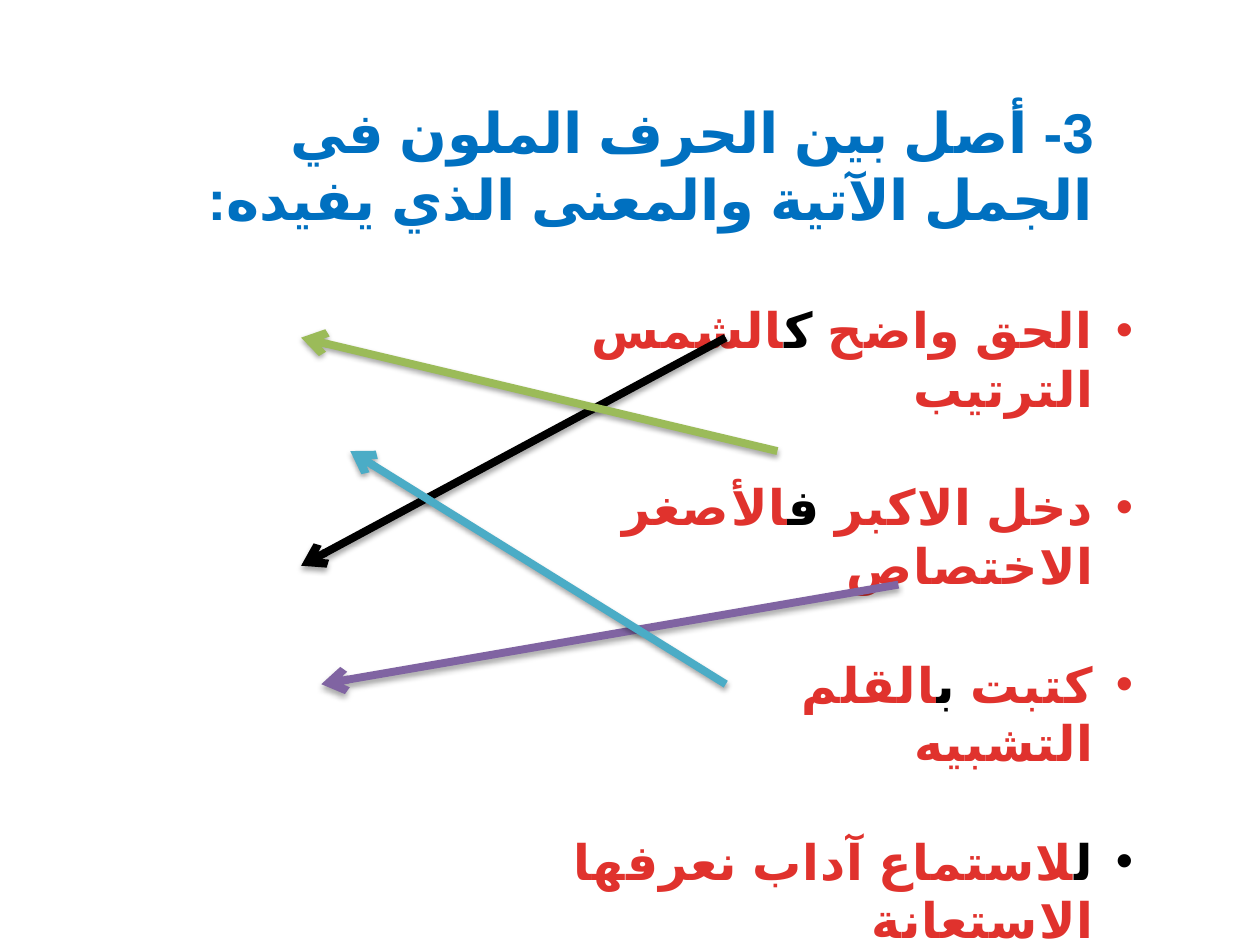
from dataclasses import dataclass

from lxml import etree
from pptx import Presentation
from pptx.dml.color import RGBColor
from pptx.enum.lang import MSO_LANGUAGE_ID
from pptx.enum.shapes import MSO_CONNECTOR
from pptx.enum.text import MSO_ANCHOR, MSO_AUTO_SIZE, PP_ALIGN
from pptx.oxml import parse_xml
from pptx.oxml.ns import qn
from pptx.util import Inches, Pt

STRAIGHT = MSO_CONNECTOR.STRAIGHT
TOP = MSO_ANCHOR.TOP
NO_FIT = MSO_AUTO_SIZE.NONE
RIGHT = PP_ALIGN.RIGHT
ARABIC = MSO_LANGUAGE_ID.ARABIC

FONT = "Calibri"
BLUE = RGBColor(0x00, 0x70, 0xC0)
RED = RGBColor(0xE0, 0x32, 0x2D)
BLACK = RGBColor(0x00, 0x00, 0x00)
GREEN = RGBColor(0x9B, 0xBB, 0x59)
PURPLE = RGBColor(0x80, 0x64, 0xA2)
TEAL = RGBColor(0x4B, 0xAC, 0xC6)

SHADOW = (
    '<a:effectLst xmlns:a="http://schemas.openxmlformats.org/drawingml/2006/main">'
    '<a:outerShdw blurRad="40000" dist="23000" dir="5400000" rotWithShape="0">'
    '<a:srgbClr val="000000"><a:alpha val="35000"/></a:srgbClr>'
    "</a:outerShdw></a:effectLst>"
)


@dataclass
class Sentence:
    before: str
    letter: str
    after: str
    meaning: str


@dataclass
class Arrow:
    start: tuple[float, float]
    end: tuple[float, float]
    color: RGBColor


SENTENCES = [
    Sentence("الحق واضح ", "ك", "الشمس", "الترتيب"),
    Sentence("دخل الاكبر ", "ف", "الأصغر", "الاختصاص"),
    Sentence("كتبت ", "ب", "القلم", "التشبيه"),
    Sentence("", "ل", "لاستماع آداب نعرفها", "الاستعانة"),
]

ARROWS = [
    Arrow((5.76, 2.68), (2.39, 4.49), BLACK),
    Arrow((6.17, 3.58), (2.39, 2.68), GREEN),
    Arrow((7.13, 4.64), (2.55, 5.43), PURPLE),
    Arrow((5.76, 5.43), (2.78, 3.58), TEAL),
]


def set_rtl(p) -> None:
    p.alignment = RIGHT
    p._p.get_or_add_pPr().set("rtl", "1")


def format_run(r, size: int, color: RGBColor) -> None:
    r.font.name = FONT
    r.font.size = Pt(size)
    r.font.bold = True
    r.font.color.rgb = color
    # Language and complex-script font decide how Arabic letters are drawn
    r.font.language_id = ARABIC
    etree.SubElement(r._r.get_or_add_rPr(), qn("a:cs")).set("typeface", "Arial")


def add_bullet(p) -> None:
    pPr = p._p.get_or_add_pPr()
    pPr.set("marL", str(Inches(0.31)))
    pPr.set("indent", str(-Inches(0.31)))
    etree.SubElement(pPr, qn("a:buFont")).set("typeface", "Arial")
    etree.SubElement(pPr, qn("a:buChar")).set("char", "•")


def add_colored(p, text: str, color: RGBColor) -> None:
    if text:
        r = p.add_run()
        r.text = text
        format_run(r, 28, color)
        r._r.get_or_add_rPr().set("spc", "50")


def add_sentence(p, sentence: Sentence) -> None:
    set_rtl(p)
    add_bullet(p)
    add_colored(p, sentence.before, RED)
    add_colored(p, sentence.letter, BLACK)
    add_colored(p, sentence.after, RED)
    p.add_line_break()
    add_colored(p, sentence.meaning, RED)


def add_arrow(s, arrow: Arrow) -> None:
    points = [Inches(v) for v in (*arrow.start, *arrow.end)]
    line = s.shapes.add_connector(STRAIGHT, *points)
    line.line.color.rgb = arrow.color
    line.line.width = Pt(4.5)
    etree.SubElement(line.line._get_or_add_ln(), qn("a:tailEnd")).set("type", "arrow")
    line._element.spPr.append(parse_xml(SHADOW))


def main() -> None:
    prs = Presentation()
    prs.slide_width, prs.slide_height = Inches(10), Inches(7.5)
    s = prs.slides.add_slide(prs.slide_layouts[5])

    # Title
    title = s.shapes.title
    title.left, title.top = Inches(1.14), Inches(0.72)
    title.width, title.height = Inches(7.64), Inches(1.18)
    tf = title.text_frame
    tf.text = "3- أصل بين الحرف الملون في الجمل الآتية والمعنى الذي يفيده:"
    tf.word_wrap = True
    tf.auto_size = NO_FIT
    tf.vertical_anchor = TOP
    set_rtl(tf.paragraphs[0])
    format_run(tf.paragraphs[0].runs[0], 32, BLUE)

    # Sentences, each followed by a meaning to match
    box = s.shapes.add_textbox(Inches(0.51), Inches(2.33), Inches(8.58), Inches(3.4))
    tf = box.text_frame
    tf.word_wrap = True
    for i, sentence in enumerate(SENTENCES):
        p = tf.add_paragraph() if i else tf.paragraphs[0]
        add_sentence(p, sentence)
        if i:
            p.space_before = Pt(34)

    # Matching arrows
    for arrow in ARROWS:
        add_arrow(s, arrow)

    prs.save("out.pptx")


if __name__ == "__main__":
    main()
